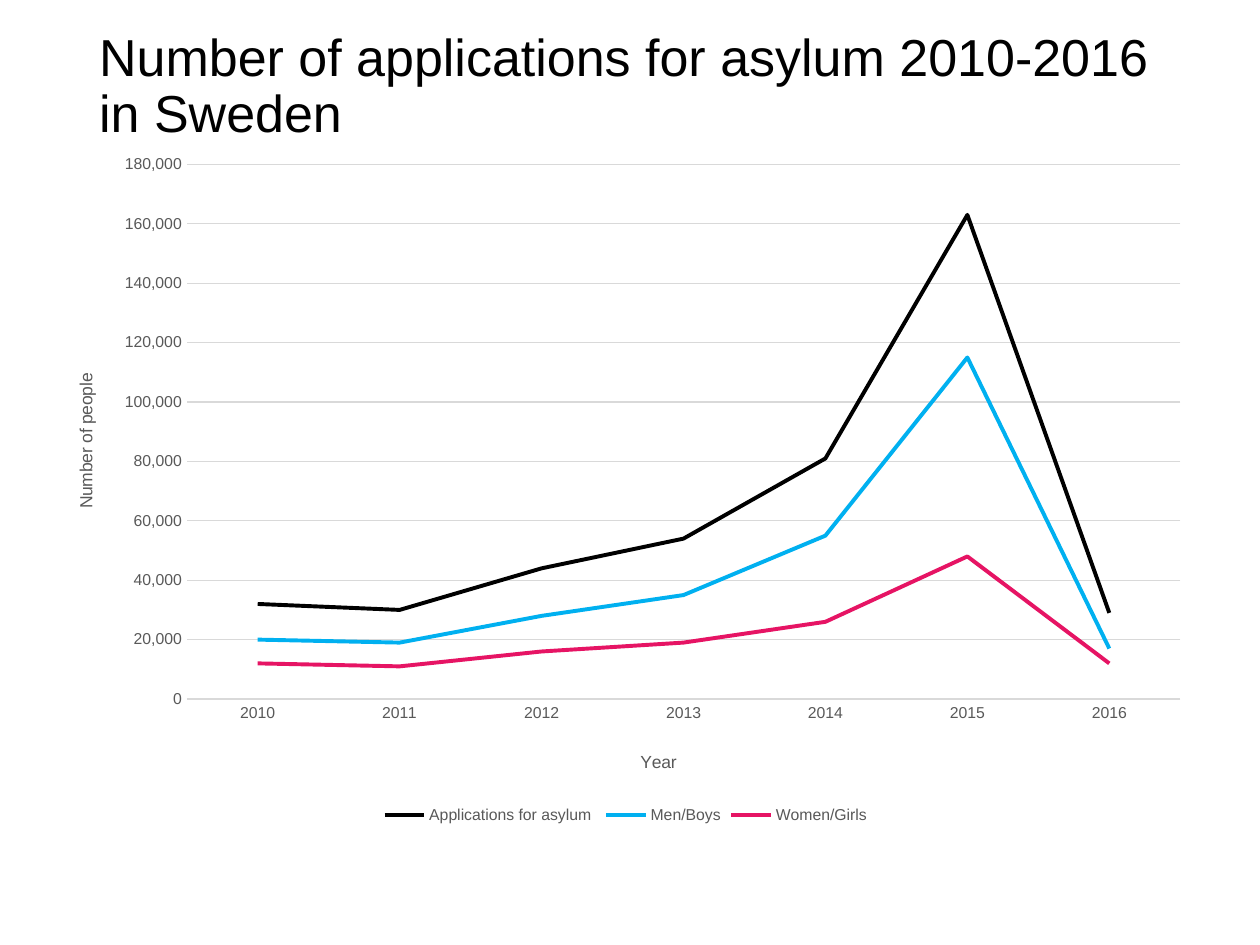
import pptx
import pptx.chart.data
import pptx.dml.color
import pptx.enum.chart
import pptx.enum.text
import pptx.oxml
import pptx.oxml.ns
import pptx.util
from dataclasses import dataclass
from pptx.util import Cm


@dataclass(frozen=True)
class Theme:
    font: str = "Arial"
    ink: str = "000000"
    muted: str = "595959"
    grid: str = "D9D9D9"
    men: str = "00B0F0"
    women: str = "E61464"
    title_size: float = 29.7
    chart_size: float = 10
    label_size: float = 9
    grid_width: float = 0.75
    series_width: float = 2.25


class Deck:
    def __init__(self, theme):
        self.theme = theme
        self.prs = pptx.Presentation()
        self.prs.slide_width = Cm(25.4)
        self.prs.slide_height = Cm(19.05)
        self.slide = self.prs.slides.add_slide(self.prs.slide_layouts[6])

    def style_font(self, font, size, color):
        font.name = self.theme.font
        font.size = pptx.util.Pt(size)
        font.bold = False
        font.color.rgb = pptx.dml.color.RGBColor.from_string(color)

    def style_line(self, line, color, width):
        line.color.rgb = pptx.dml.color.RGBColor.from_string(color)
        line.width = pptx.util.Pt(width)

    def place(self, parent, index, **fractions):
        for old in parent.findall(pptx.oxml.ns.qn("c:layout")):
            parent.remove(old)
        inner = '<c:layoutTarget val="inner"/>' if "w" in fractions else ""
        modes = "".join(f'<c:{k}Mode val="edge"/>' for k in "xy")
        values = "".join(f'<c:{k} val="{v}"/>' for k, v in fractions.items())
        ns = pptx.oxml.ns.nsdecls("c")
        parent.insert(index, pptx.oxml.parse_xml(
            f"<c:layout {ns}><c:manualLayout>{inner}{modes}{values}"
            "</c:manualLayout></c:layout>"))

    def title(self, text, x, y, w, h):
        tf = self.slide.shapes.add_textbox(Cm(x), Cm(y), Cm(w), Cm(h)).text_frame
        tf.word_wrap = True
        tf.vertical_anchor = pptx.enum.text.MSO_ANCHOR.MIDDLE
        p = tf.paragraphs[0]
        p.text = text
        p.line_spacing = 0.9
        self.style_font(p.font, self.theme.title_size, self.theme.ink)

    def axis(self, axis, title, x, y):
        none = pptx.enum.chart.XL_TICK_MARK.NONE
        axis.major_tick_mark = none
        axis.minor_tick_mark = none
        self.style_font(axis.tick_labels.font, self.theme.label_size, self.theme.muted)
        p = axis.axis_title.text_frame.paragraphs[0]
        p.text = title
        self.style_font(p.font, self.theme.chart_size, self.theme.muted)
        self.place(axis.axis_title._element, 1, x=x, y=y)

    def line_chart(self, years, series, x, y, w, h):
        t = self.theme
        data = pptx.chart.data.CategoryChartData(number_format="#,##0")
        data.categories = years
        for name, values, color in series:
            data.add_series(name, [v * 1000 for v in values])
        chart = self.slide.shapes.add_chart(
            pptx.enum.chart.XL_CHART_TYPE.LINE, Cm(x), Cm(y), Cm(w), Cm(h), data).chart
        self.style_font(chart.font, t.chart_size, t.ink)
        chart.has_title = False
        plot = chart.plots[0]
        plot.vary_by_categories = False
        for ser, (name, values, color) in zip(plot.series, series):
            ser.smooth = False
            ser.marker.style = pptx.enum.chart.XL_MARKER_STYLE.NONE
            self.style_line(ser.format.line, color, t.series_width)

        self.axis(chart.category_axis, "Year", 0.51, 0.88)
        self.style_line(chart.category_axis.format.line, t.grid, t.grid_width)
        val = chart.value_axis
        self.axis(val, "Number of people", 0.02, 0.33)
        val.minimum_scale = 0
        val.maximum_scale = 180000
        val.major_unit = 20000
        val.tick_labels.number_format = "#,##0"
        val.tick_labels.number_format_is_linked = False
        val.format.line.fill.background()
        self.style_line(val.major_gridlines.format.line, t.grid, t.grid_width)

        chart.has_legend = True
        chart.legend.position = pptx.enum.chart.XL_LEGEND_POSITION.BOTTOM
        chart.legend.include_in_layout = False
        self.style_font(chart.legend.font, t.label_size, t.muted)
        area = chart._chartSpace.chart.plotArea
        self.place(area, 0, x=0.12, y=0.03, w=0.86, h=0.78)


def main():
    theme = Theme()
    deck = Deck(theme)
    deck.title("Number of applications for asylum 2010-2016 in Sweden",
               1.75, 0.64, 21.9, 2.26)
    years = [str(year) for year in range(2010, 2017)]
    thousands = [
        ("Applications for asylum ", (32, 30, 44, 54, 81, 163, 29), theme.ink),
        ("Men/Boys", (20, 19, 28, 35, 55, 115, 17), theme.men),
        ("Women/Girls", (12, 11, 16, 19, 26, 48, 12), theme.women),
    ]
    deck.line_chart(years, thousands, 0.97, 2.9, 23.29, 13.82)
    deck.prs.save("out.pptx")


if __name__ == "__main__":
    main()
